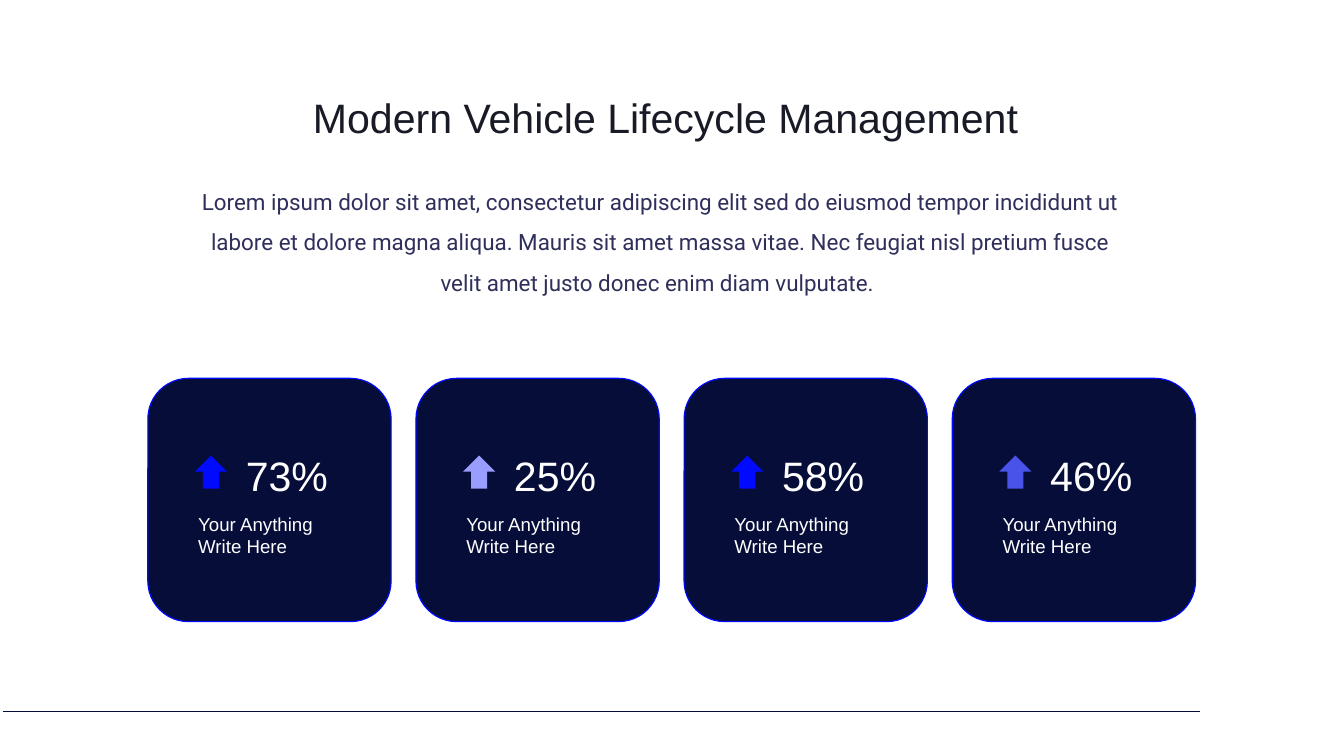
"""Build the vehicle lifecycle slide with four percentage cards."""
from dataclasses import dataclass

from lxml.etree import SubElement
from pptx import Presentation
from pptx.dml.color import RGBColor
from pptx.enum.shapes import MSO_CONNECTOR as Connector, MSO_SHAPE as Shape
from pptx.enum.text import MSO_ANCHOR as Anchor, MSO_AUTO_SIZE as AutoSize, PP_ALIGN as Align
from pptx.oxml.ns import qn
from pptx.util import Inches, Pt

TITLE = "Modern Vehicle Lifecycle Management "
BODY = (
    "Lorem ipsum dolor sit amet, consectetur adipiscing elit sed do eiusmod tempor "
    "incididunt ut labore et dolore magna aliqua. Mauris sit amet massa vitae. "
    "Nec feugiat nisl pretium fusce velit amet justo donec enim diam vulputate. "
)
LABEL = "Your Anything\nWrite Here"
CARDS = [("73%", "000AFF"), ("25%", "999DFF"), ("58%", "000AFF"), ("46%", "4952E9")]

CARD_LEFT, CARD_TOP, CARD_SIZE, CARD_STEP = 2.2, 5.63, 3.62, 3.99


@dataclass(frozen=True)
class Theme:
    heading_font: str = "Arial"
    body_font: str = "Roboto"
    title: str = "181A26"
    body: str = "2F2F5B"
    navy: str = "060D39"
    outline: str = "000AFF"
    white: str = "FFFFFF"
    large: int = 44
    medium: int = 24
    small: int = 20


THEME = Theme()


def color(value):
    return RGBColor.from_string(value)


def place(box, left, top, width, height):
    box.left, box.top = Inches(left), Inches(top)
    box.width, box.height = Inches(width), Inches(height)


def write(box, text, font, size, ink, align=Align.LEFT, spacing=1.0):
    frame = box.text_frame
    frame.text = text
    frame.word_wrap = True
    frame.auto_size = AutoSize.SHAPE_TO_FIT_TEXT
    frame.vertical_anchor = Anchor.TOP
    for para in frame.paragraphs:
        para.alignment = align
        para.line_spacing = spacing
        para.space_before = Pt(0)
        for span in para.runs:
            span.font.name = font
            span.font.size = Pt(size)
            span.font.color.rgb = color(ink)


def add_shape(slide, kind, left, top, width, height, fill):
    shape = slide.shapes.add_shape(kind, Inches(left), Inches(top), Inches(width), Inches(height))
    shape.shadow.inherit = False
    shape.fill.solid()
    shape.fill.fore_color.rgb = color(fill)
    shape.line.fill.background()
    return shape


def add_text(slide, text, left, top, width, height, size):
    box = slide.shapes.add_textbox(Inches(left), Inches(top), Inches(width), Inches(height))
    write(box, text, THEME.heading_font, size, THEME.white)


def add_card(slide, left, value, arrow_color):
    card = add_shape(slide, Shape.ROUNDED_RECTANGLE, left, CARD_TOP, CARD_SIZE, CARD_SIZE, THEME.navy)
    card.line.color.rgb = color(THEME.outline)
    card.line.width = Pt(1.25)
    add_text(slide, value, left + 1.36, CARD_TOP + 1.03, 1.94, 0.84, THEME.large)
    add_shape(slide, Shape.UP_ARROW, left + 0.7, CARD_TOP + 1.15, 0.48, 0.49, arrow_color)
    add_text(slide, LABEL, left + 0.65, CARD_TOP + 1.95, 2.65, 0.77, THEME.small)


def add_rule(slide):
    rule = slide.shapes.add_connector(
        Connector.STRAIGHT, Inches(0.04), Inches(10.59), Inches(17.86), Inches(10.59)
    )
    rule.line.color.rgb = color(THEME.navy)
    rule.line.width = Pt(0.5)
    SubElement(rule._element.spPr, qn("a:effectLst"))


def add_heading(slide):
    title, body = slide.placeholders
    place(title, 3.9, 1.33, 12.19, 0.84)
    write(title, TITLE, THEME.heading_font, THEME.large, THEME.title, Align.CENTER)
    place(body, 2.75, 2.55, 14.14, 1.86)
    write(body, BODY, THEME.body_font, THEME.medium, THEME.body, Align.CENTER, 1.5)
    properties = body.text_frame.paragraphs[0]._p.get_or_add_pPr()
    properties.set("marL", "0")
    properties.set("indent", "0")
    SubElement(properties, qn("a:buNone"))


def main():
    deck = Presentation()
    deck.slide_width, deck.slide_height = Inches(20), Inches(11.25)
    slide = deck.slides.add_slide(deck.slide_layouts[1])
    add_rule(slide)
    for index, (value, arrow_color) in enumerate(CARDS):
        add_card(slide, CARD_LEFT + index * CARD_STEP, value, arrow_color)
    add_heading(slide)
    deck.save("out.pptx")


if __name__ == "__main__":
    main()
